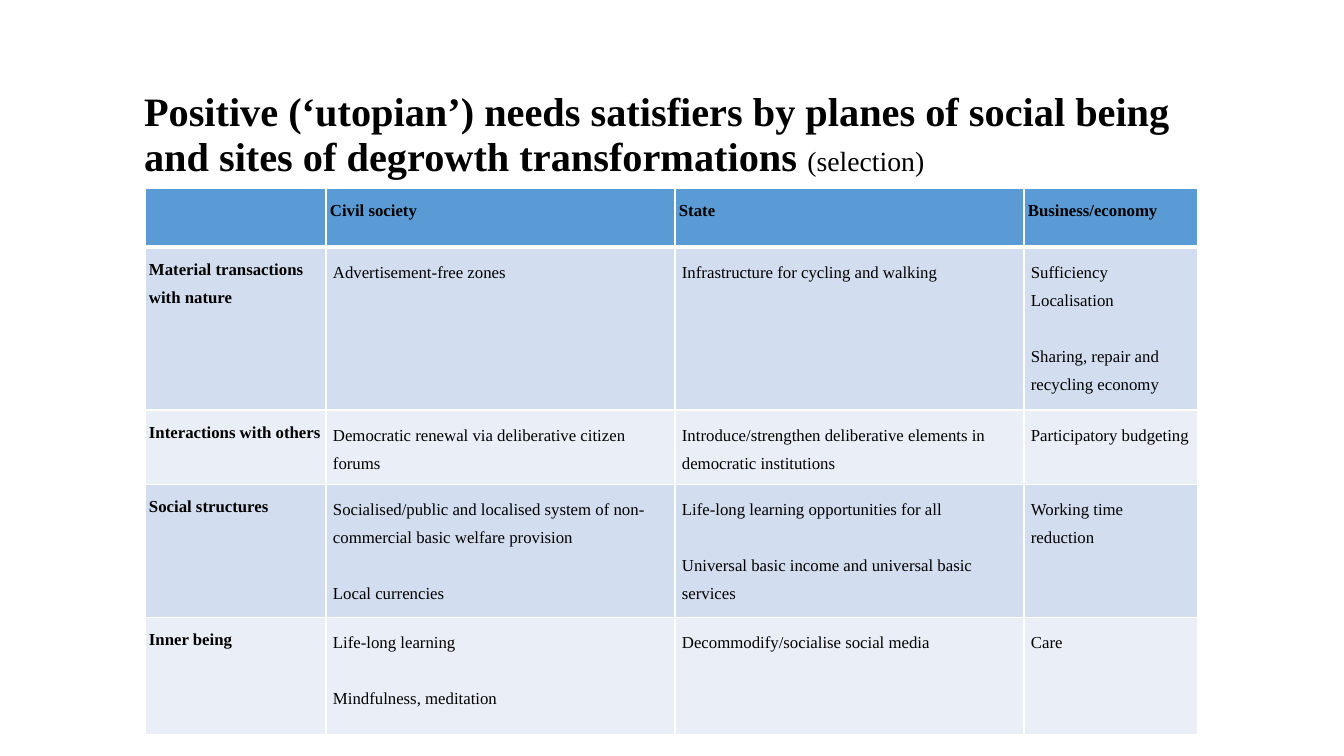
from lxml import etree
from pptx import Presentation
from pptx import util as u
from pptx.dml.color import RGBColor
from pptx.enum import text
from pptx.oxml import ns

PX = 914400 / 100.8
FONT = "Times New Roman"
BLACK, WHITE = "000000", "FFFFFF"
HEADER_FILL, BAND_FILLS = "5B9BD5", ["D2DEEF", "EAEFF7"]
COLUMN_WIDTHS = [181, 349, 349, 174]
ROW_HEIGHTS = [59, 154, 70, 126, 117]
LINE_GAP = u.Pt(20)

# Each cell lists its lines; "+" marks a line set apart by a gap above it.
ROWS = [
    [[], ["Civil society"], ["State"], ["Business/economy"]],
    [["Material transactions with nature"],
     ["Advertisement-free zones"],
     ["Infrastructure for cycling and walking"],
     ["Sufficiency", "Localisation", "+Sharing, repair and recycling economy"]],
    [["Interactions with others"],
     ["Democratic renewal via deliberative citizen forums"],
     ["Introduce/strengthen deliberative elements in democratic institutions"],
     ["Participatory budgeting"]],
    [["Social structures"],
     ["Socialised/public and localised system of non-commercial basic welfare provision",
      "+Local currencies"],
     ["Life-long learning opportunities for all",
      "+Universal basic income and universal basic services"],
     ["Working time reduction"]],
    [["Inner being"],
     ["Life-long learning", "+Mindfulness, meditation"],
     ["Decommodify/socialise social media"],
     ["Care"]],
]


def px(length):
    return u.Emu(round(length * PX))


def add_run(paragraph, words, size, bold):
    run = paragraph.add_run()
    run.text = words
    run.font.name = FONT
    run.font.size = u.Pt(size)
    run.font.bold = bold
    run.font.color.rgb = RGBColor.from_string(BLACK)


presentation = Presentation()
presentation.slide_width, presentation.slide_height = px(1344), px(756)
slide = presentation.slides.add_slide(presentation.slide_layouts[6])

# Title
title = slide.shapes.add_textbox(px(144), px(90), px(1069), px(88)).text_frame
title.word_wrap = True
title.margin_left = title.margin_right = title.margin_top = title.margin_bottom = 0
paragraph = title.paragraphs[0]
paragraph.line_spacing = 0.93
add_run(paragraph, "Positive (‘utopian’) needs satisfiers by planes of social being "
        "and sites of degrowth transformations ", 28.8, True)
add_run(paragraph, "(selection)", 19.8, False)

# Table
table = slide.shapes.add_table(
    len(ROWS), len(COLUMN_WIDTHS), px(145), px(188),
    px(sum(COLUMN_WIDTHS)), px(sum(ROW_HEIGHTS))).table
for column, width in zip(table.columns, COLUMN_WIDTHS):
    column.width = px(width)
for row, height in zip(table.rows, ROW_HEIGHTS):
    row.height = px(height)

for row_index, row_cells in enumerate(ROWS):
    is_header = row_index == 0
    for column_index, lines in enumerate(row_cells):
        cell = table.cell(row_index, column_index)
        is_label = is_header or column_index == 0
        inset = px(4 if is_label else 7)
        cell.margin_left = cell.margin_right = inset
        cell.margin_top = cell.margin_bottom = inset
        cell.fill.solid()
        fill = HEADER_FILL if is_header else BAND_FILLS[(row_index - 1) % 2]
        cell.fill.fore_color.rgb = RGBColor.from_string(fill)

        for line_index, line in enumerate(lines):
            frame = cell.text_frame
            paragraph = frame.add_paragraph() if line_index else frame.paragraphs[0]
            paragraph.line_spacing = 1.5
            paragraph.alignment = (text.PP_ALIGN.JUSTIFY if is_header
                                   else text.PP_ALIGN.LEFT)
            if line.startswith("+"):
                paragraph.space_before = LINE_GAP
            add_run(paragraph, line.removeprefix("+"), 12, is_label)

        # Borders come before the fill in the cell properties
        properties = cell._tc.get_or_add_tcPr()
        for position, side in enumerate(["lnL", "lnR", "lnT", "lnB"]):
            under_header = (row_index, side) in [(0, "lnB"), (1, "lnT")]
            border = etree.Element(ns.qn("a:" + side),
                                   w=str(u.Pt(3 if under_header else 1)))
            solid = etree.SubElement(border, ns.qn("a:solidFill"))
            etree.SubElement(solid, ns.qn("a:srgbClr"), val=WHITE)
            properties.insert(position, border)

presentation.save("out.pptx")
